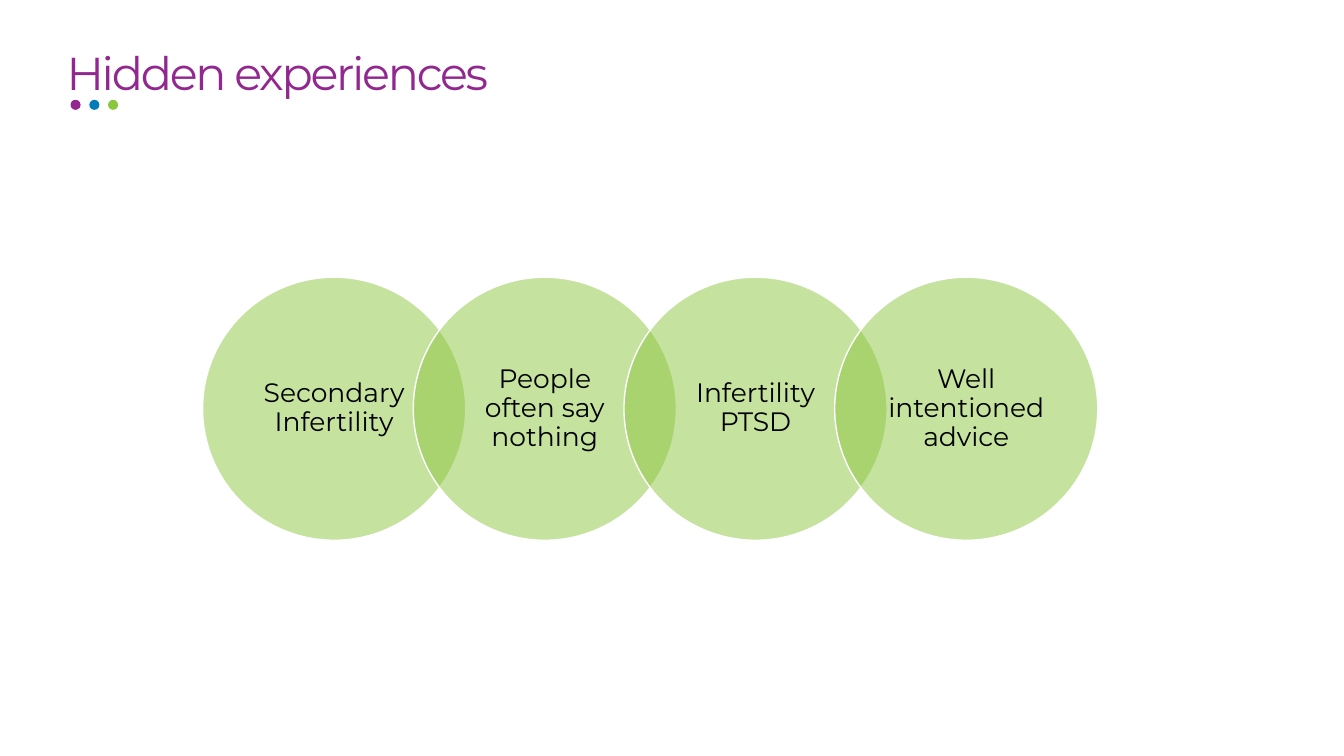
"""Build the "Hidden experiences" slide: a title, three accent dots and a row of overlapping circles."""
from lxml.etree import SubElement
from pptx import Presentation
from pptx.dml.color import RGBColor
from pptx.enum.shapes import MSO_SHAPE
from pptx.enum.text import MSO_ANCHOR, MSO_AUTO_SIZE, PP_ALIGN
from pptx.oxml.ns import qn
from pptx.util import Pt

TITLE = "Hidden experiences"
EXPERIENCES = ["Secondary Infertility", "People often say nothing",
               "Infertility PTSD", "Well intentioned advice"]

THEME = {
    "font": "Montserrat",
    "purple": RGBColor(0x91, 0x27, 0x8F),
    "blue": RGBColor(0x00, 0x7D, 0xB8),
    "green": RGBColor(0x8C, 0xC6, 0x3F),
    "white": RGBColor(255, 255, 255),
    "black": RGBColor(0, 0, 0),
    "title_size": 32.9,
    "label_size": 19,
}
TITLE_BOX = (40.3, 34.6, 873.4, 41.8)
DOTS = {"left": 50.4, "top": 71.3, "size": 7.2, "pitch": 13.4}
CIRCLES = {"left": 144.7, "top": 198, "size": 187.9, "pitch": 150.5}


def set_text(shape, text, frame_format, para_format, size, color):
    """Write one formatted paragraph and return its run."""
    tf = shape.text_frame
    for name, value in frame_format.items():
        setattr(tf, name, value)
    p = tf.paragraphs[0]
    for name, value in para_format.items():
        setattr(p, name, value)
    r = p.add_run()
    r.text = text
    for name, value in {"name": THEME["font"], "size": Pt(size)}.items():
        setattr(r.font, name, value)
    r.font.color.rgb = color
    return r


def add_circle(s, row, index, color):
    """Add the circle at the given index of an evenly spaced row."""
    sp = s.shapes.add_shape(MSO_SHAPE.OVAL, Pt(row["left"] + index * row["pitch"]),
                            Pt(row["top"]), Pt(row["size"]), Pt(row["size"]))
    sp.shadow.inherit = False
    sp.fill.solid()
    sp.fill.fore_color.rgb = color
    return sp


def add_title(s):
    """Place and format the title placeholder."""
    sp = s.shapes.title
    for name, value in zip(("left", "top", "width", "height"), TITLE_BOX):
        setattr(sp, name, Pt(value))
    r = set_text(sp, TITLE,
                 {"word_wrap": True, "auto_size": MSO_AUTO_SIZE.NONE,
                  "vertical_anchor": MSO_ANCHOR.MIDDLE},
                 {"alignment": PP_ALIGN.LEFT, "line_spacing": 0.8},
                 THEME["title_size"], THEME["purple"])
    r.font._element.set("spc", "-160")


def add_experience(s, index, text):
    """Add one translucent labelled circle."""
    sp = add_circle(s, CIRCLES, index, THEME["green"])
    color = sp._element.spPr.find(qn("a:solidFill"))[0]
    SubElement(color, qn("a:alpha"), val="50000")
    sp.line.color.rgb = THEME["white"]
    sp.line.width = Pt(1)
    set_text(sp, text,
             {"word_wrap": True, "vertical_anchor": MSO_ANCHOR.MIDDLE,
              "margin_left": Pt(10), "margin_right": Pt(10),
              "margin_top": Pt(2), "margin_bottom": Pt(2)},
             {"alignment": PP_ALIGN.CENTER, "line_spacing": 0.9},
             THEME["label_size"], THEME["black"])


def main():
    """Assemble and save the slide."""
    prs = Presentation()
    prs.slide_width, prs.slide_height = Pt(960), Pt(540)
    s = prs.slides.add_slide(prs.slide_layouts[5])
    add_title(s)
    for i, name in enumerate(("purple", "blue", "green")):
        add_circle(s, DOTS, i, THEME[name]).line.fill.background()
    for i, text in enumerate(EXPERIENCES):
        add_experience(s, i, text)
    prs.save("out.pptx")


if __name__ == "__main__":
    main()
